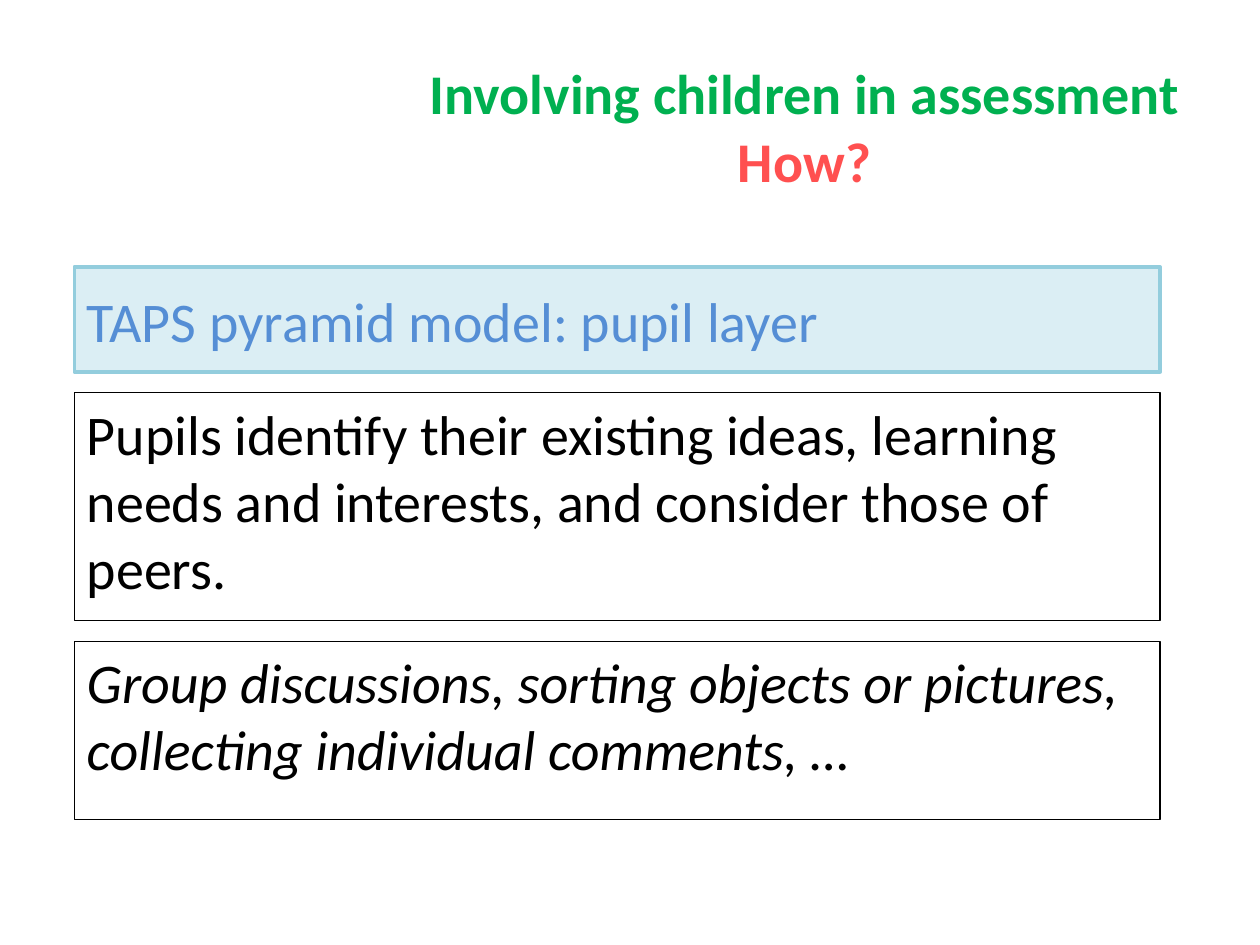
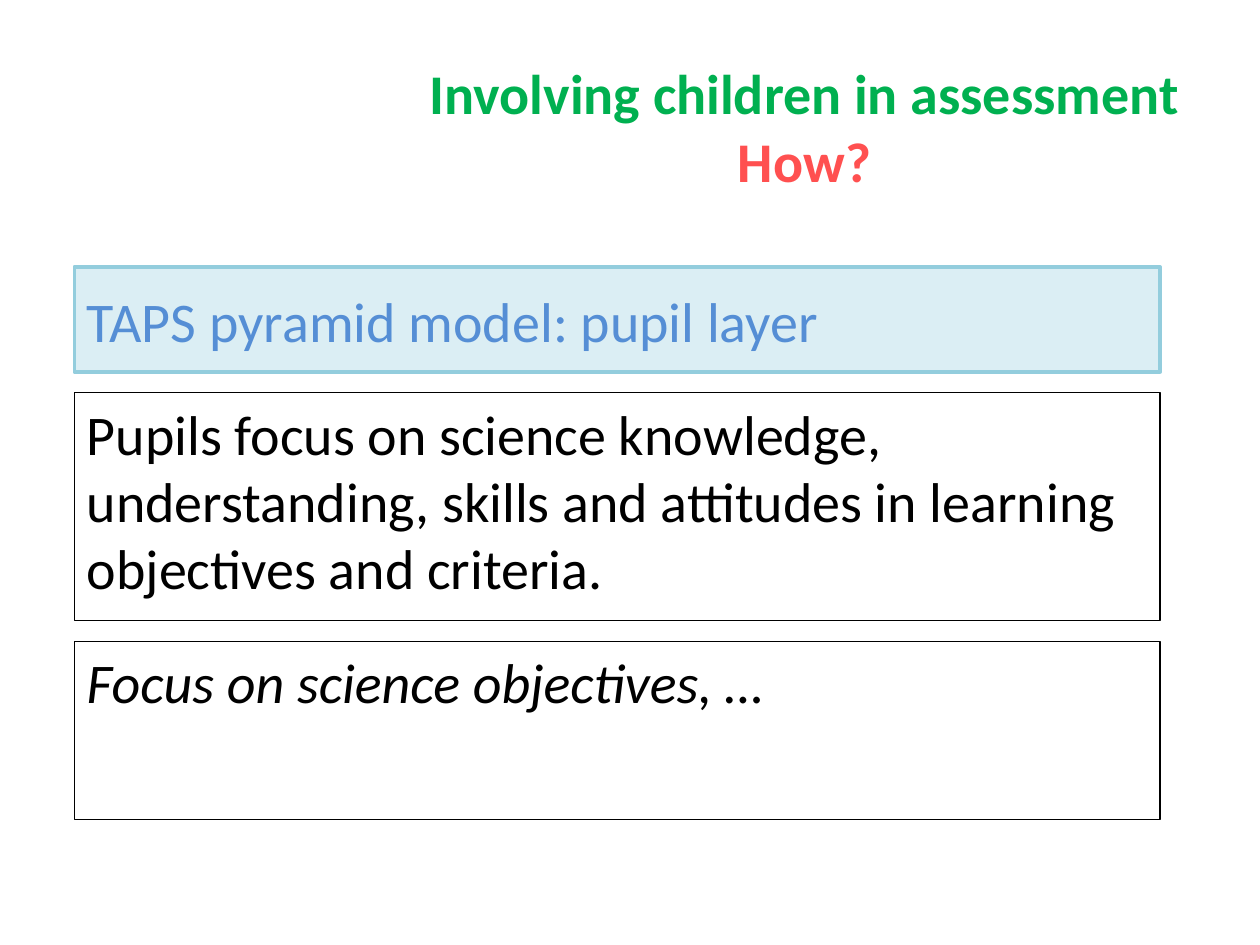
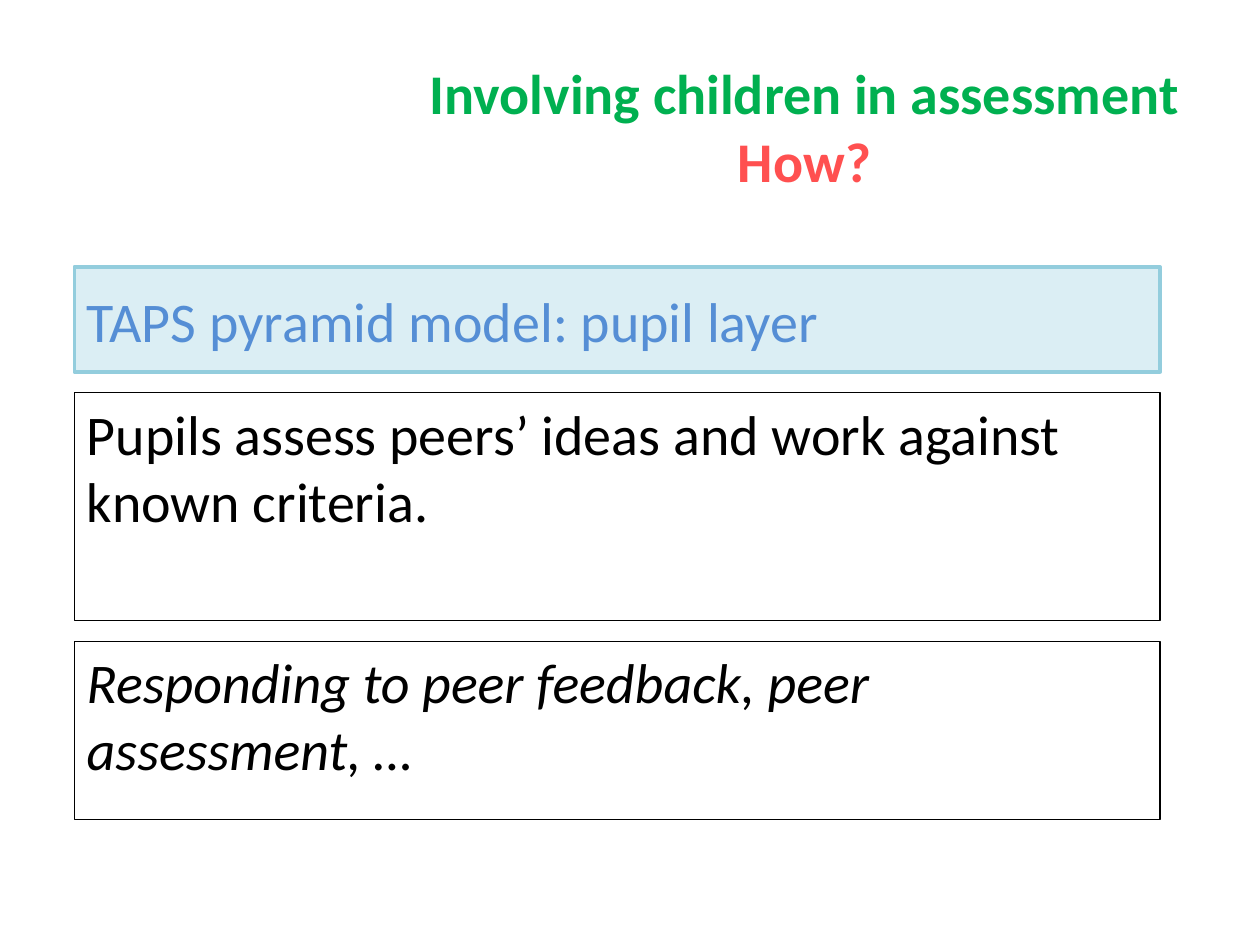
from pptx import Presentation
from pptx.dml.color import RGBColor
from pptx.enum.shapes import MSO_SHAPE
from pptx.enum.text import MSO_ANCHOR, PP_ALIGN
from pptx.util import Pt

GREEN = RGBColor(0x00, 0xB0, 0x50)
RED = RGBColor(0xFF, 0x50, 0x50)
BLUE = RGBColor(0x55, 0x8E, 0xD5)
PALE_BLUE = RGBColor(0xDB, 0xEE, 0xF4)
SKY_BLUE = RGBColor(0x93, 0xCD, 0xDD)
BLACK = RGBColor(0x00, 0x00, 0x00)

FONT_NAME = "Calibri"
FONT_SIZE = 32
TITLE_BOX = (235.5, 21.5, 448.5, 101)
PANELS_BOX = (42.5, 152.5, 620.5, 316)
BANNER_HEIGHT = 60
STATEMENT_HEIGHT = 130
PANEL_GAP = 12

PUPIL_LAYER = [
    ("Pupils identify their existing ideas, learning needs and interests, "
     "and consider those of peers.",
     "Group discussions, sorting objects or pictures, "
     "collecting individual comments, …"),
    ("Pupils focus on science knowledge, understanding, skills and attitudes "
     "in learning objectives and criteria.",
     "Focus on science objectives, …"),
    ("Pupils assess peers’ ideas and work against known criteria.",
     "Responding to peer feedback, peer assessment, …"),
]


def add_text(paragraph, text, color=BLACK, bold=False, italic=False):
    run = paragraph.add_run()
    run.text = text
    run.font.name = FONT_NAME
    run.font.size = Pt(FONT_SIZE)
    run.font.bold = bold
    run.font.italic = italic
    run.font.color.rgb = color


def add_title(slide, box):
    shape = slide.shapes.add_textbox(*map(Pt, box))
    frame = shape.text_frame
    frame.word_wrap = True
    frame.vertical_anchor = MSO_ANCHOR.MIDDLE
    paragraph = frame.paragraphs[0]
    paragraph.alignment = PP_ALIGN.CENTER
    add_text(paragraph, "Involving children in assessment", color=GREEN, bold=True)
    paragraph.add_line_break()
    add_text(paragraph, "How?", color=RED, bold=True)


def add_panel(slide, box, text, fill=None, line=BLACK, line_width=0.75,
              line_spacing=1.0, **text_format):
    shape = slide.shapes.add_shape(MSO_SHAPE.RECTANGLE, *map(Pt, box))
    shape.shadow.inherit = False
    if fill is None:
        shape.fill.background()
    else:
        shape.fill.solid()
        shape.fill.fore_color.rgb = fill
    shape.line.color.rgb = line
    shape.line.width = Pt(line_width)
    frame = shape.text_frame
    frame.word_wrap = True
    frame.vertical_anchor = MSO_ANCHOR.TOP
    paragraph = frame.paragraphs[0]
    paragraph.alignment = PP_ALIGN.LEFT
    paragraph.line_spacing = line_spacing
    add_text(paragraph, text, **text_format)


def add_panels(slide, box, statement, examples):
    left, top, width, height = box
    statement_top = top + BANNER_HEIGHT + PANEL_GAP
    examples_top = statement_top + STATEMENT_HEIGHT + PANEL_GAP
    add_panel(slide, (left, statement_top, width, STATEMENT_HEIGHT), statement)
    add_panel(slide, (left, top, width, BANNER_HEIGHT),
              "TAPS pyramid model: pupil layer", fill=PALE_BLUE, line=SKY_BLUE,
              line_width=2, line_spacing=1.2, color=BLUE)
    add_panel(slide, (left, examples_top, width, top + height - examples_top),
              examples, italic=True)


def main():
    presentation = Presentation()
    presentation.slide_width = Pt(720)
    presentation.slide_height = Pt(540)
    for statement, examples in PUPIL_LAYER:
        slide = presentation.slides.add_slide(presentation.slide_layouts[6])
        add_title(slide, TITLE_BOX)
        add_panels(slide, PANELS_BOX, statement, examples)
    presentation.save("out.pptx")


if __name__ == "__main__":
    main()
